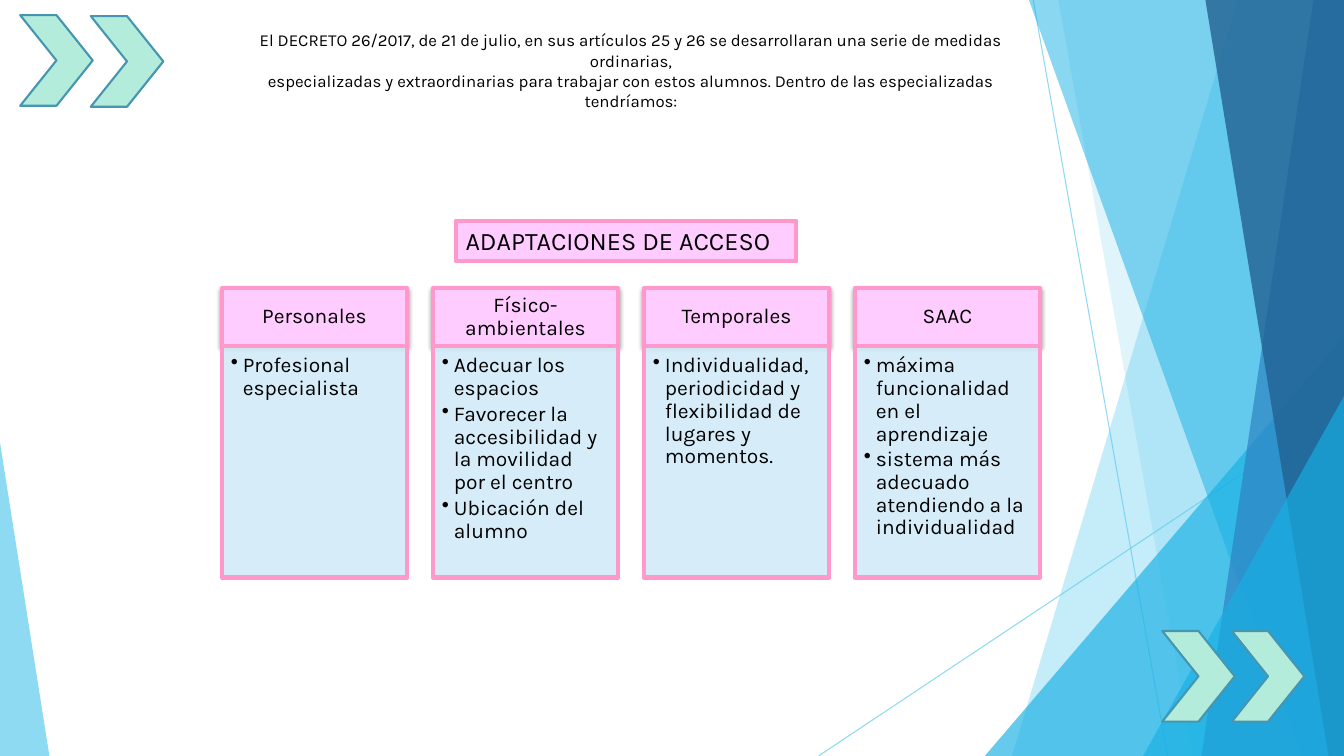
from lxml import etree
from pptx import Presentation, util as u
from pptx.dml.color import RGBColor
from pptx.enum import shapes, text
from pptx.oxml.ns import qn

COLS, ROWS = 160, 90
CELL = u.Inches(7.5) // ROWS
KIND = shapes.MSO_SHAPE
ALIGN = text.PP_ALIGN
ANCHOR = text.MSO_ANCHOR

HUES = {
    "sky": "5FCBEF", "cyan": "17B0E4", "blue": "2E83C3", "navy": "226292",
    "mint": "B3ECDA", "teal": "4696B1", "pink": "FFCCFF", "rose": "FF99CC",
    "ice": "D2ECF9", "black": "000000",
}

BANDS = [
    (147.36, 120.48, "sky", 36),
    (126, 142, "sky", 20),
    None,
    (122.5, 154.9, "cyan", 50),
    (156.36, 143.04, "blue", 70),
    (143.5, 158.16, "navy", 80),
]

CARDS = [
    ("Personales", ["Profesional especialista"]),
    ("Físico-ambientales", [
        "Adecuar los espacios",
        "Favorecer la accesibilidad y la movilidad por el centro",
        "Ubicación del alumno",
    ]),
    ("Temporales", [
        "Individualidad, periodicidad y flexibilidad de lugares y momentos.",
    ]),
    ("SAAC", [
        "máxima funcionalidad en el aprendizaje",
        "sistema más adecuado atendiendo a la individualidad",
    ]),
]

INTRO = [
    "El DECRETO 26/2017, de 21 de julio, en sus artículos 25 y 26 "
    "se desarrollaran una serie de medidas ordinarias,",
    "especializadas y extraordinarias para trabajar con estos alumnos. "
    "Dentro de las especializadas",
    "tendríamos:",
]


def span(cells):
    return u.Emu(round(cells * CELL))


def tint(hue):
    return RGBColor.from_string(HUES[hue])


def fade(props, route, alpha):
    color = props.find("/".join(qn(tag) for tag in route))
    etree.SubElement(color, qn("a:alpha"), val=str(alpha * 1000))


def write(shape, lines, size=15, align=ALIGN.LEFT, anchor=ANCHOR.TOP,
          inset=(0.1, 0.05, 0.1, 0.05), space=1, after=0, bullet=False):
    frame = shape.text_frame
    frame.word_wrap = True
    frame.vertical_anchor = anchor
    (frame.margin_left, frame.margin_top,
     frame.margin_right, frame.margin_bottom) = map(u.Inches, inset)
    for i, line in enumerate(lines):
        para = frame.paragraphs[0] if i == 0 else frame.add_paragraph()
        para.alignment = align
        para.line_spacing = space
        para.space_after = u.Pt(after)
        run = para.add_run()
        run.text = line
        run.font.name = "Karla"
        run.font.size = u.Pt(size)
        run.font.color.rgb = tint("black")
        if bullet:
            props = para._p.get_or_add_pPr()
            props.set("marL", str(u.Inches(0.12)))
            props.set("indent", str(-u.Inches(0.12)))
            etree.SubElement(props, qn("a:buChar"), char="•")


class Deck:
    def __init__(self):
        self.show = Presentation()
        self.show.slide_width = span(COLS)
        self.show.slide_height = span(ROWS)
        self.slide = self.show.slides.add_slide(self.show.slide_layouts[6])
        self.items = self.slide.shapes

    def paint(self, shape, fill, alpha=100, edge=None, width=0):
        shape.shadow.inherit = False
        shape.fill.solid()
        shape.fill.fore_color.rgb = tint(fill)
        if alpha < 100:
            fade(shape._element.spPr, ("a:solidFill", "a:srgbClr"), alpha)
        if edge:
            shape.line.color.rgb = tint(edge)
            shape.line.width = u.Pt(width)
        else:
            shape.line.fill.background()
        return shape

    def form(self, kind, box, fill, adjust=None, **look):
        shape = self.items.add_shape(kind, *map(span, box))
        if adjust is not None:
            shape.adjustments[0] = adjust
        return self.paint(shape, fill, **look)

    def band(self, top, foot, fill, alpha):
        points = [(top, 0), (COLS, 0), (COLS, ROWS), (foot, ROWS)]
        points = [(span(x), span(y)) for x, y in points]
        pen = self.items.build_freeform(*points[0])
        pen.add_line_segments(points[1:], close=True)
        self.paint(pen.convert_to_shape(), fill, alpha)

    def wedge(self, box, fill, alpha, peak):
        self.form(KIND.ISOSCELES_TRIANGLE, box, fill, peak, alpha=alpha)

    def ray(self, *ends):
        line = self.items.add_connector(
            shapes.MSO_CONNECTOR.STRAIGHT, *map(span, ends))
        line.line.color.rgb = tint("sky")
        line.line.width = u.Pt(0.75)
        props = line._element.spPr
        fade(props, ("a:ln", "a:solidFill", "a:srgbClr"), 70)
        etree.SubElement(props, qn("a:effectLst"))

    def arrow(self, left, top):
        self.form(KIND.CHEVRON, (left, top, 8.64, 10.8), "mint",
                  edge="teal", width=1.5)

    def panel(self, box, fill, lines, alpha=100, **fmt):
        shape = self.form(KIND.RECTANGLE, box, fill, alpha=alpha,
                          edge="rose", width=3)
        write(shape, lines, **fmt)
        return shape

    def shade(self, shape):
        effects = shape._element.spPr.find(qn("a:effectLst"))
        drop = etree.SubElement(
            effects, qn("a:outerShdw"), blurRad=str(u.Pt(3)),
            dist=str(u.Pt(2)), dir="5400000", rotWithShape="0")
        color = etree.SubElement(drop, qn("a:srgbClr"), val=HUES["black"])
        etree.SubElement(color, qn("a:alpha"), val="35000")

    def card(self, left, head, notes):
        top, tall, wide = 34.32, 6.84, 22.08
        title = self.panel(
            (left, top, wide, tall), "pink", [head], align=ALIGN.CENTER,
            anchor=ANCHOR.MIDDLE, inset=(0.12, 0.07, 0.12, 0.07), space=0.9)
        self.shade(title)
        self.panel((left, top + tall, wide, 27.6), "ice", notes, alpha=90,
                   inset=(0.09, 0.09, 0.12, 0.13), space=0.9, after=2.25,
                   bullet=True)

    def label(self, box, lines, **fmt):
        write(self.items.add_textbox(*map(span, box)), lines, **fmt)


def main():
    deck = Deck()
    deck.ray(123, 0, 139, ROWS)
    deck.ray(COLS, 48.36, 97.44, ROWS)
    for band in BANDS:
        if band:
            deck.band(*band)
        else:
            deck.wedge((117.24, 40, 42.76, 50), "cyan", 66, 1)
    deck.wedge((136.08, 47.16, 23.92, 42.84), "cyan", 66, 1)
    deck.wedge((0, 52.68, 5.88, 37.32), "sky", 70, 0)

    deck.arrow(2.4, 1.8)
    deck.arrow(10.8, 1.92)
    deck.label((27.84, 3, 94.56, 10.92), INTRO, size=12, align=ALIGN.CENTER)
    for i, (head, notes) in enumerate(CARDS):
        deck.card(26.4 + 25.12 * i, head, notes)
    deck.panel((54.24, 26.28, 40.56, 4.8), "pink",
               ["ADAPTACIONES DE ACCESO"], size=18)
    for left in (138.36, 146.64):
        deck.arrow(left, 75.12)
    deck.show.save("out.pptx")


if __name__ == "__main__":
    main()
